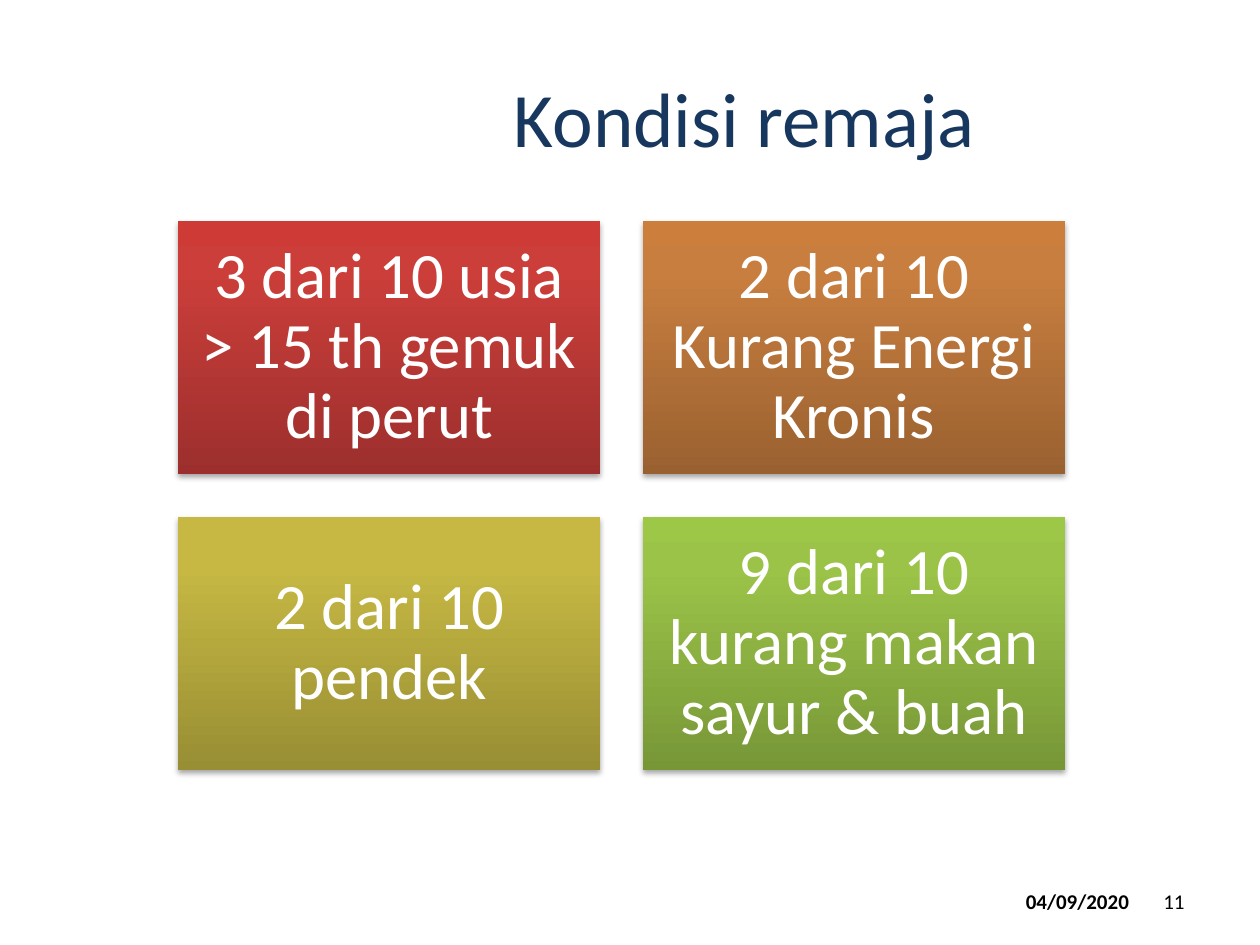
import copy

import pptx
import pptx.dml.color
import pptx.enum.shapes
import pptx.enum.text
import pptx.oxml
import pptx.oxml.ns
import pptx.util
from pptx.util import Cm

COLOURS = {"title": "17375E", "footer": "000000", "card text": "FFFFFF"}
CARDS = [
    ("3 dari 10 usia > 15 th gemuk di perut", ("9C2F2D", "CB3E3A", "CE3B37")),
    ("2 dari 10 Kurang Energi Kronis", ("9A6130", "C87E3F", "CC7E3C")),
    ("2 dari 10 pendek", ("988E34", "C6B843", "C9BB41")),
    ("9 dari 10 kurang makan sayur & buah", ("779737", "9BC348", "9DC746")),
]
STOP_POSITIONS = (0, 0.8, 1)
CARD_WIDTH, CARD_HEIGHT, GAP = 8.51, 5.11, 0.86
GRID_LEFT, GRID_TOP = 3.59, 4.45
SHADOW = (
    '<a:outerShdw xmlns:a="http://schemas.openxmlformats.org/drawingml/2006/main" '
    'blurRad="40000" dist="23000" dir="5400000" rotWithShape="0">'
    '<a:srgbClr val="000000"><a:alpha val="35000"/></a:srgbClr></a:outerShdw>'
)
ALIGN = pptx.enum.text.PP_ALIGN


def write_text(shape, text, size, colour, alignment, bold=False):
    """Put one vertically centred paragraph in the shape and return it."""
    frame = shape.text_frame
    frame.word_wrap = True
    frame.vertical_anchor = pptx.enum.text.MSO_ANCHOR.MIDDLE
    paragraph = frame.paragraphs[0]
    paragraph.alignment = alignment
    run = paragraph.add_run()
    run.text = text
    run.font.name = "Calibri"
    run.font.size = pptx.util.Pt(size)
    run.font.bold = bold
    run.font.color.rgb = pptx.dml.color.RGBColor.from_string(COLOURS[colour])
    return paragraph


presentation = pptx.Presentation()
presentation.slide_width, presentation.slide_height = Cm(25.4), Cm(19.05)
slide = presentation.slides.add_slide(presentation.slide_layouts[6])

title = slide.shapes.add_textbox(Cm(5.89), Cm(0.76), Cm(18.24), Cm(3.18))
write_text(title, "Kondisi remaja", 44, "title", ALIGN.CENTER)

for index, (text, gradient) in enumerate(CARDS):
    row, column = divmod(index, 2)
    card = slide.shapes.add_shape(
        pptx.enum.shapes.MSO_SHAPE.RECTANGLE,
        Cm(GRID_LEFT + column * (CARD_WIDTH + GAP)),
        Cm(GRID_TOP + row * (CARD_HEIGHT + GAP)),
        Cm(CARD_WIDTH), Cm(CARD_HEIGHT),
    )
    card.line.fill.background()

    # A new gradient has two stops; the cards need a third.
    card.fill.gradient()
    card.fill.gradient_angle = 90
    stop_list = card.element.spPr.find(".//" + pptx.oxml.ns.qn("a:gsLst"))
    stop_list.append(copy.deepcopy(stop_list[-1]))
    for stop, position, colour in zip(card.fill.gradient_stops, STOP_POSITIONS, gradient):
        stop.position = position
        stop.color.rgb = pptx.dml.color.RGBColor.from_string(colour)

    card.shadow.inherit = False
    effects = card.element.spPr.find(pptx.oxml.ns.qn("a:effectLst"))
    effects.append(pptx.oxml.parse_xml(SHADOW))

    frame = card.text_frame
    frame.margin_left = frame.margin_right = Cm(0.38)
    frame.margin_top = frame.margin_bottom = Cm(0.38)
    paragraph = write_text(card, text, 37, "card text", ALIGN.CENTER)
    paragraph.line_spacing = 0.9

for left, text, bold in [(17.09, "04/09/2020", True), (18.21, "11", False)]:
    footer = slide.shapes.add_textbox(Cm(left), Cm(17.65), Cm(5.92), Cm(1.02))
    write_text(footer, text, 12, "footer", ALIGN.RIGHT, bold)

presentation.save("out.pptx")
